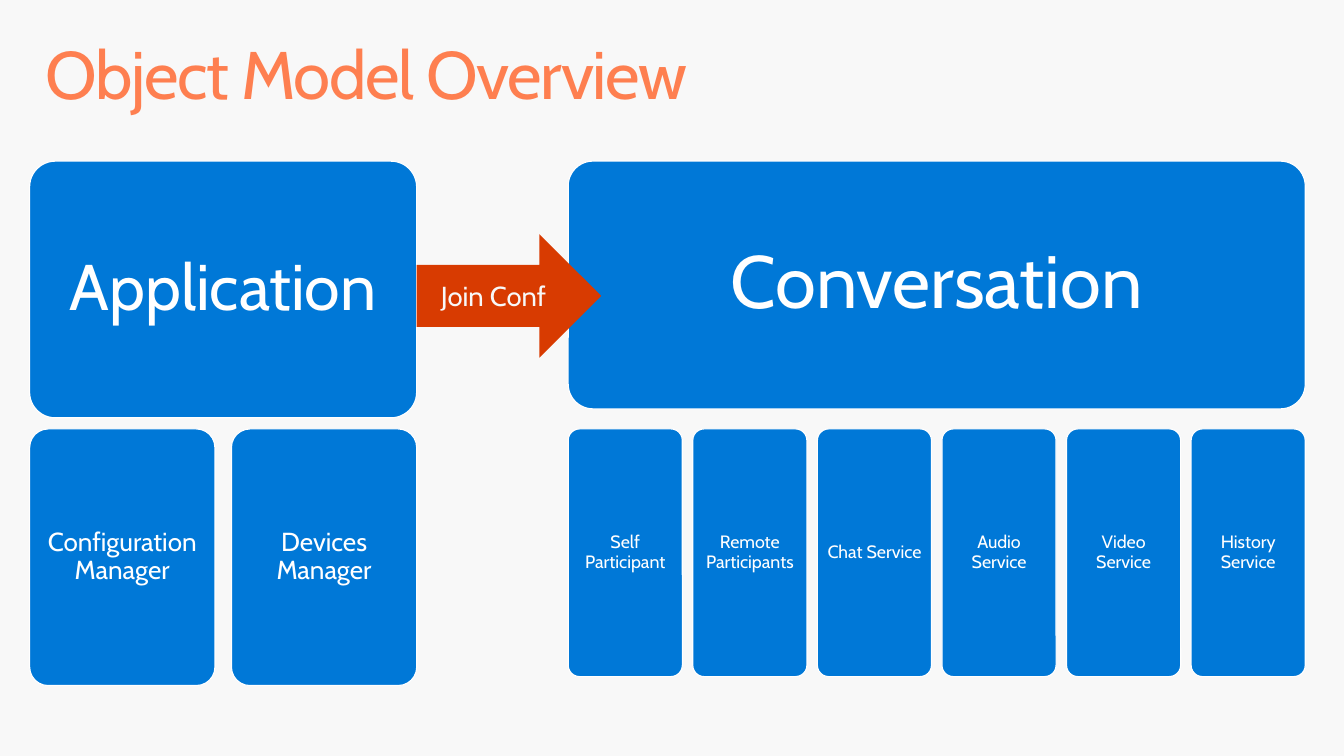
from dataclasses import dataclass
from typing import NamedTuple

from pptx import Presentation
from pptx.dml.color import RGBColor
from pptx.enum.shapes import MSO_SHAPE
from pptx.enum.text import MSO_ANCHOR, PP_ALIGN
from pptx.util import Pt


@dataclass(frozen=True)
class Theme:
    font: str = "Cabin"
    background: RGBColor = RGBColor(0xF8, 0xF8, 0xF8)
    heading: RGBColor = RGBColor(0xFE, 0x7F, 0x50)
    block: RGBColor = RGBColor(0x00, 0x78, 0xD7)
    block_text: RGBColor = RGBColor(0xFF, 0xFF, 0xFF)
    arrow: RGBColor = RGBColor(0xD8, 0x3B, 0x01)
    heading_size: int = 49
    application_size: int = 47
    manager_size: int = 19
    conversation_size: int = 54
    service_size: int = 13
    arrow_size: int = 20


class Box(NamedTuple):
    """Left, top, width and height in points."""
    left: float
    top: float
    width: float
    height: float

    def lengths(self):
        return [Pt(value) for value in self]


THEME = Theme()
MEMBER_TOP = 312.5


def write(shape, text, size, color, margins, align=PP_ALIGN.CENTER,
          anchor=MSO_ANCHOR.MIDDLE, line_spacing=0.9):
    """Fill a shape with one styled paragraph and return its run."""
    frame = shape.text_frame
    frame.text = text
    frame.word_wrap = True
    frame.vertical_anchor = anchor
    across, down = margins
    frame.margin_left = frame.margin_right = Pt(across)
    frame.margin_top = frame.margin_bottom = Pt(down)
    paragraph = frame.paragraphs[0]
    paragraph.alignment = align
    paragraph.line_spacing = line_spacing
    run = paragraph.runs[0]
    run.font.name = THEME.font
    run.font.size = Pt(size)
    run.font.color.rgb = color
    return run


def add_heading(slide, box, text):
    heading = slide.shapes.add_textbox(*box.lengths())
    run = write(heading, text, THEME.heading_size, THEME.heading, (11.5, 7.2),
                PP_ALIGN.LEFT, MSO_ANCHOR.TOP)
    # Tighten the letters by one point
    run.font._element.set("spc", "-100")


def add_block(slide, box, text, size):
    block = slide.shapes.add_shape(MSO_SHAPE.ROUNDED_RECTANGLE, *box.lengths())
    block.adjustments[0] = 0.1
    block.shadow.inherit = False
    block.fill.solid()
    block.fill.fore_color.rgb = THEME.block
    block.line.color.rgb = THEME.block_text
    block.line.width = Pt(0.85)
    margin = 0.3 * size
    write(block, text, size, THEME.block_text, (margin, margin))


def add_object_group(slide, box, owner, owner_size, members, member_size, gap):
    """Place an owner block with its members in an even row below."""
    add_block(slide, box, owner, owner_size)
    width = (box.width - gap * (len(members) - 1)) / len(members)
    for index, member in enumerate(members):
        left = box.left + index * (width + gap)
        add_block(slide, Box(left, MEMBER_TOP, width, box.height),
                  member, member_size)


def add_join_arrow(slide, box, text):
    arrow = slide.shapes.add_shape(MSO_SHAPE.RIGHT_ARROW, *box.lengths())
    arrow.shadow.inherit = False
    arrow.fill.solid()
    arrow.fill.fore_color.rgb = THEME.arrow
    arrow.line.fill.background()
    write(arrow, text, THEME.arrow_size, THEME.background, (0, 3.6),
          line_spacing=1.0)


def main():
    deck = Presentation()
    deck.slide_width, deck.slide_height = Pt(979.2), Pt(550.8)
    slide = deck.slides.add_slide(deck.slide_layouts[6])
    slide.background.fill.solid()
    slide.background.fill.fore_color.rgb = THEME.background

    add_heading(slide, Box(21.6, 23, 936, 72), "Object Model Overview")

    # Application and its managers
    application = Box(21.6, 117.4, 282, 187)
    add_object_group(slide, application, "Application", THEME.application_size,
                     ["Configuration Manager", "Devices Manager"],
                     THEME.manager_size, gap=12)

    # Conversation with its participants and services
    conversation = Box(414, 117.4, 537, 180.5)
    add_object_group(slide, conversation, "Conversation",
                     THEME.conversation_size,
                     ["Self Participant", "Remote Participants", "Chat Service",
                      "Audio Service", "Video Service", "History Service"],
                     THEME.service_size, gap=7.6)

    # Step from application to conversation
    arrow_left = application.left + application.width
    add_join_arrow(slide, Box(arrow_left, 170.6, 134.4, 90), "Join Conf")

    deck.save("out.pptx")


if __name__ == "__main__":
    main()
